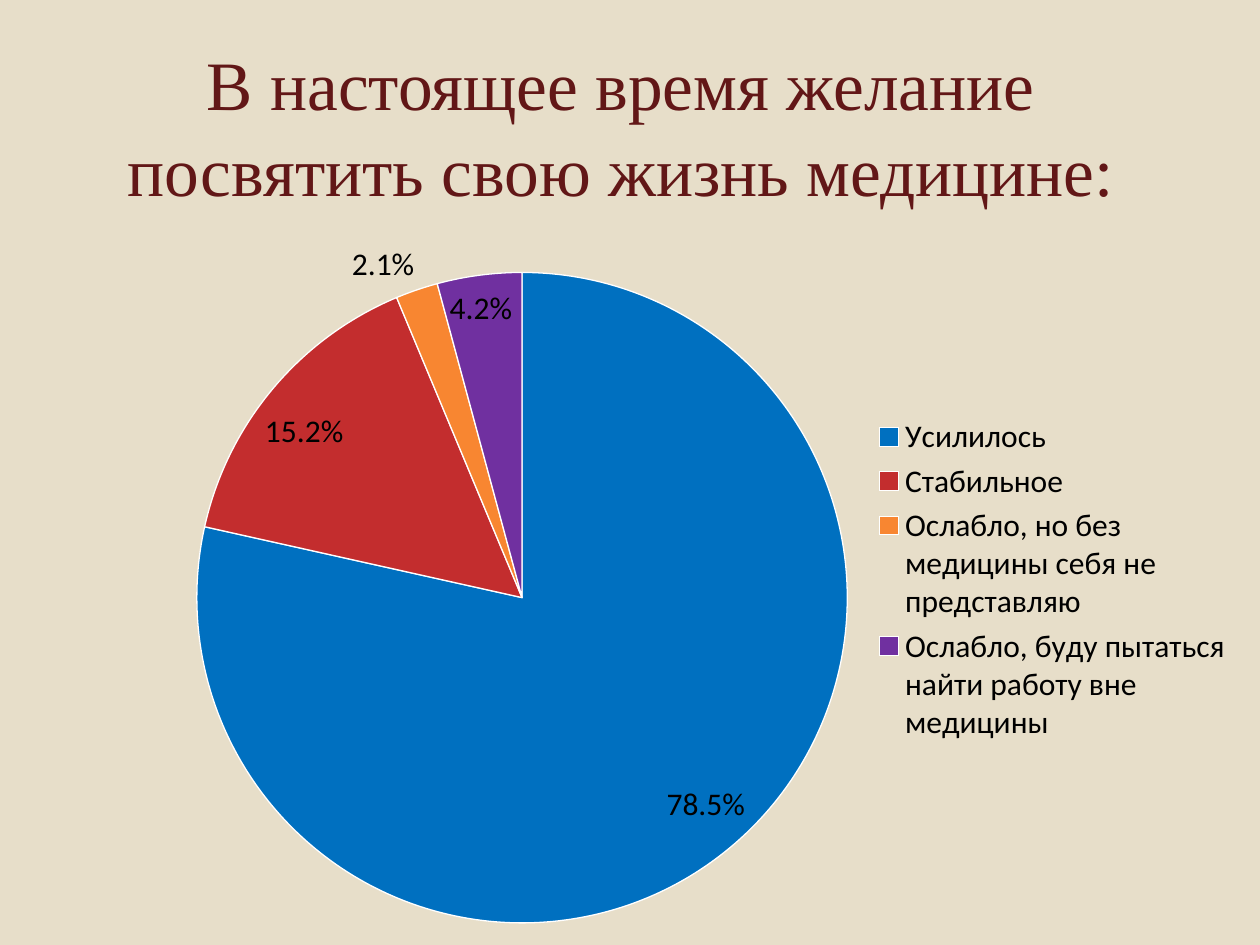
from lxml import etree
from pptx import Presentation
from pptx.chart.data import CategoryChartData
from pptx.dml.color import RGBColor
from pptx.enum.chart import XL_CHART_TYPE, XL_LABEL_POSITION, XL_LEGEND_POSITION
from pptx.enum.text import MSO_ANCHOR, PP_ALIGN
from pptx.oxml.ns import qn
from pptx.util import Emu, Pt

PIE = XL_CHART_TYPE.PIE
BEST_FIT = XL_LABEL_POSITION.BEST_FIT
RIGHT = XL_LEGEND_POSITION.RIGHT
MIDDLE = MSO_ANCHOR.MIDDLE
CENTER = PP_ALIGN.CENTER

EMU_PER_PX = 914400 // 126
COLORS = {
    "background": "E7DEC9",
    "title": "621717",
    "text": "000000",
    "border": "FFFFFF",
}
ANSWERS = [
    ("Усилилось ", 78.5, "0070C0"),
    ("Стабильное", 15.2, "C32D2E"),
    ("Ослабло, но без медицины себя не представляю", 2.1, "F88631"),
    ("Ослабло, буду пытаться найти работу вне медицины", 4.2, "7030A0"),
]


def px(*lengths):
    """Turn pixel lengths into EMU."""
    return [Emu(length * EMU_PER_PX) for length in lengths]


def rgb(value):
    """Turn a hex string into a colour."""
    return RGBColor.from_string(value)


def place(parent, index, x, y, w, h, inner=False):
    """Give a chart part a fixed place, in fractions of the chart."""
    for old in parent.findall(qn("c:layout")):
        parent.remove(old)
    layout = etree.Element(qn("c:layout"))
    manual = etree.SubElement(layout, qn("c:manualLayout"))
    settings = [("layoutTarget", "inner")] if inner else []
    settings += [("xMode", "edge"), ("yMode", "edge")]
    settings += [("x", x), ("y", y), ("w", w), ("h", h)]
    for tag, value in settings:
        etree.SubElement(manual, qn(f"c:{tag}")).set("val", str(value))
    parent.insert(index, layout)


def add_title(slide, text):
    """Add the centred slide title."""
    title = slide.shapes.add_textbox(*px(54, 45, 1134, 158))
    frame = title.text_frame
    frame.word_wrap = True
    frame.vertical_anchor = MIDDLE
    frame.text = text
    paragraph = frame.paragraphs[0]
    paragraph.alignment = CENTER
    paragraph.line_spacing = 1.04
    font = paragraph.runs[0].font
    font.name = "Times New Roman"
    font.size = Pt(39.6)
    font.color.rgb = rgb(COLORS["title"])


def add_answer_pie(slide):
    """Add the pie of answers with its labels and legend."""
    data = CategoryChartData()
    data.categories = [answer for answer, _, _ in ANSWERS]
    data.add_series("Series 1", [share for _, share, _ in ANSWERS])
    chart = slide.shapes.add_chart(PIE, *px(174, 214, 1071, 731), data).chart
    chart.has_title = False
    chart.font.name = "Calibri"
    chart.font.size = Pt(18)
    chart.font.color.rgb = rgb(COLORS["text"])

    pie = chart.plots[0]
    pie.vary_by_categories = True
    for index, (_, _, color) in enumerate(ANSWERS):
        slice_format = pie.series[0].points[index].format
        slice_format.fill.solid()
        slice_format.fill.fore_color.rgb = rgb(color)
        slice_format.line.color.rgb = rgb(COLORS["border"])
        slice_format.line.width = Pt(0.75)

    pie.has_data_labels = True
    labels = pie.data_labels
    labels.show_percentage = True
    labels.show_value = False
    labels.number_format = "0.0%"
    labels.number_format_is_linked = False
    labels.position = BEST_FIT

    chart.has_legend = True
    chart.legend.position = RIGHT
    chart.legend.include_in_layout = False
    legend = chart._chartSpace.find(".//" + qn("c:legend"))
    place(legend, 1, 0.65, 0.27, 0.34, 0.46)
    plot_area = chart._chartSpace.find(".//" + qn("c:plotArea"))
    place(plot_area, 0, 0.02, 0.08, 0.61, 0.89, inner=True)


def main():
    """Build the slide and save it."""
    deck = Presentation()
    deck.slide_width, deck.slide_height = px(1260, 945)
    slide = deck.slides.add_slide(deck.slide_layouts[6])
    slide.background.fill.solid()
    slide.background.fill.fore_color.rgb = rgb(COLORS["background"])
    add_answer_pie(slide)
    add_title(slide, "В настоящее время желание посвятить свою жизнь медицине:")
    deck.save("out.pptx")


if __name__ == "__main__":
    main()
